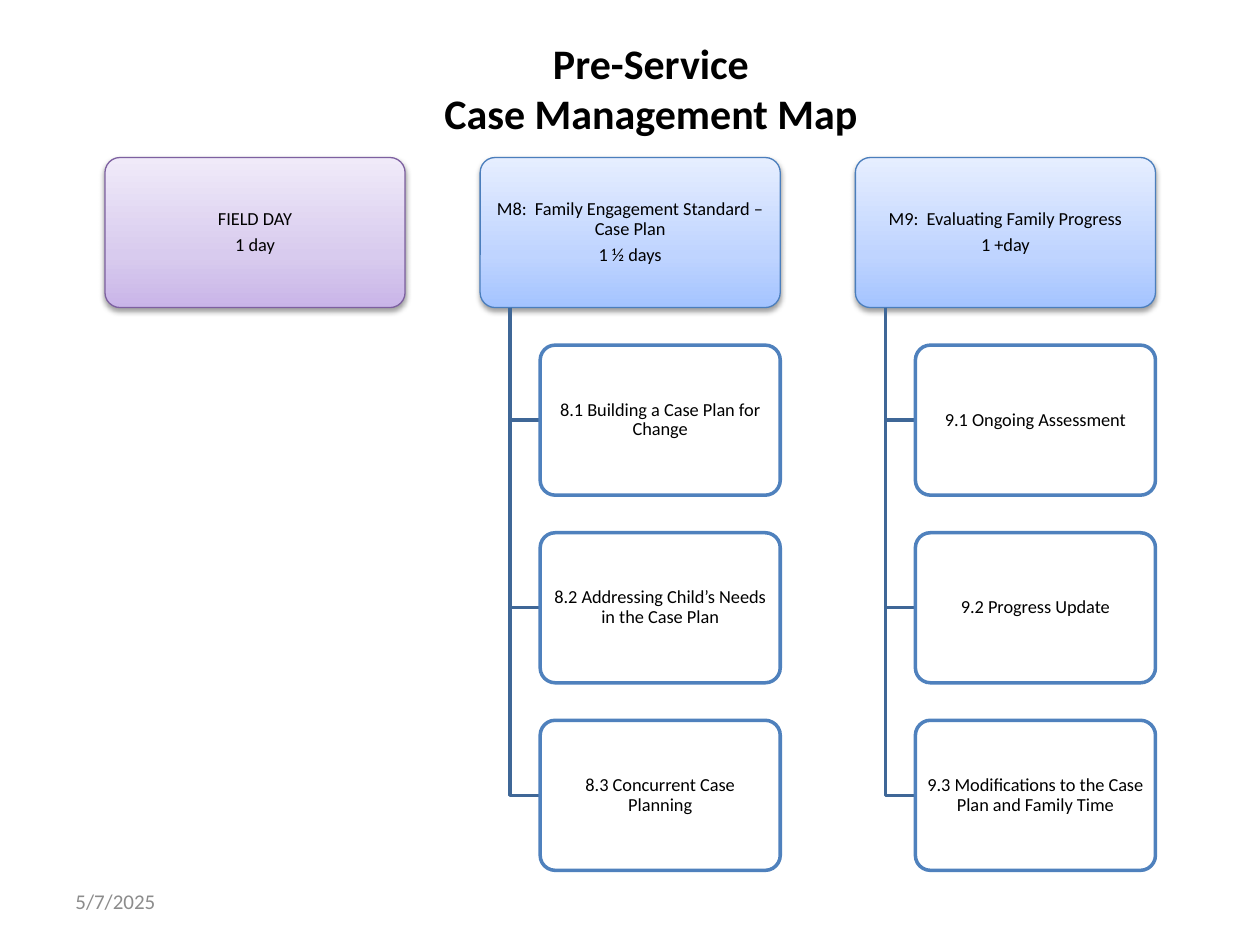
from copy import deepcopy

from lxml.etree import SubElement
from pptx import Presentation
from pptx.dml.color import RGBColor
from pptx.enum.shapes import MSO_SHAPE as Shape
from pptx.enum.text import MSO_ANCHOR as Anchor, MSO_AUTO_SIZE as AutoSize, PP_ALIGN as Align
from pptx.oxml.ns import qn
from pptx.util import Pt

FONT = "Calibri"
TOP, ROW_STEP = 90, 107.2
LEFT, COLUMN_STEP = 60, 214.4
HEADER_WIDTH, BOX_HEIGHT = 171.5, 85.75
TRUNK_INDENT, TOPIC_INDENT = 17.15, 34.3

PURPLE = ("7D60A0", ["C9B5E8", "D8CBEE", "F0EAF9"])
BLUE = ("4B7EBC", ["A4C4FF", "BFD4FF", "E6EEFF"])

MODULES = [
    (PURPLE, ["FIELD DAY", "1 day"], []),
    (BLUE, ["M8:  Family Engagement Standard – Case Plan", "1 ½ days"], [
        "8.1 Building a Case Plan for Change",
        "8.2 Addressing Child’s Needs in the Case Plan",
        "8.3 Concurrent Case Planning",
    ]),
    (BLUE, ["M9:  Evaluating Family Progress", "1 +day"], [
        "9.1 Ongoing Assessment",
        "9.2 Progress Update",
        "9.3 Modifications to the Case Plan and Family Time",
    ]),
]


def color(hex_string):
    return RGBColor.from_string(hex_string)


def place(shape, left, top, width, height):
    shape.left, shape.top, shape.width, shape.height = map(Pt, (left, top, width, height))


def add_run(paragraph, text, size, hex_color="000000", bold=False):
    run = paragraph.add_run()
    run.text = text
    run.font.name = FONT
    run.font.size = Pt(size)
    run.font.bold = bold
    run.font.color.rgb = color(hex_color)


def set_line(shape, hex_color, width):
    shape.line.color.rgb = color(hex_color)
    shape.line.width = Pt(width)


def fill_gradient(shape, hex_colors):
    """Fill from bottom to top with three stops."""
    shape.fill.gradient()
    shape.fill.gradient_angle = 90
    stop_list = shape._element.spPr.find(qn("a:gradFill")).find(qn("a:gsLst"))
    stop_list.insert(1, deepcopy(stop_list[0]))
    for stop, position, hex_color in zip(shape.fill.gradient_stops, (0, 0.35, 1), hex_colors):
        stop.position = position
        stop.color.rgb = color(hex_color)


def add_drop_shadow(shape):
    effects = shape._element.spPr.find(qn("a:effectLst"))
    shadow = SubElement(effects, qn("a:outerShdw"), blurRad=str(Pt(3.1)),
                        dist=str(Pt(1.6)), dir="5400000", rotWithShape="0")
    black = SubElement(shadow, qn("a:srgbClr"), val="000000")
    SubElement(black, qn("a:alpha"), val="38000")


def add_box(slide, left, top, width, lines):
    box = slide.shapes.add_shape(Shape.ROUNDED_RECTANGLE, Pt(left), Pt(top),
                                 Pt(width), Pt(BOX_HEIGHT))
    box.adjustments[0] = 0.1
    box.shadow.inherit = False
    frame = box.text_frame
    frame.word_wrap = True
    frame.vertical_anchor = Anchor.MIDDLE
    frame.margin_left = frame.margin_right = Pt(4)
    frame.margin_top = frame.margin_bottom = Pt(4)
    for index, line in enumerate(lines):
        paragraph = frame.add_paragraph() if index else frame.paragraphs[0]
        paragraph.alignment = Align.CENTER
        paragraph.line_spacing = 0.9
        paragraph.space_after = Pt(3.7)
        add_run(paragraph, line, 10.5)
    return box


def add_header(slide, left, lines, line_color, gradient):
    header = add_box(slide, left, TOP, HEADER_WIDTH, lines)
    fill_gradient(header, gradient)
    set_line(header, line_color, 0.75)
    add_drop_shadow(header)


def add_topic(slide, left, top, text):
    topic = add_box(slide, left, top, HEADER_WIDTH - TOPIC_INDENT, [text])
    topic.fill.solid()
    topic.fill.fore_color.rgb = color("FFFFFF")
    set_line(topic, "4F81BD", 2)


def add_elbow(slide, left, top, right, bottom):
    builder = slide.shapes.build_freeform(Pt(left), Pt(top))
    builder.add_line_segments([(Pt(left), Pt(bottom)), (Pt(right), Pt(bottom))], close=False)
    elbow = builder.convert_to_shape()
    elbow.fill.background()
    elbow.shadow.inherit = False
    set_line(elbow, "3F6797", 2)


def add_module(slide, left, palette, lines, topics):
    add_header(slide, left, lines, *palette)
    for row, topic in enumerate(topics, start=1):
        top = TOP + row * ROW_STEP
        topic_left = left + TOPIC_INDENT
        add_elbow(slide, left + TRUNK_INDENT, TOP + BOX_HEIGHT,
                  topic_left, top + BOX_HEIGHT / 2)
        add_topic(slide, topic_left, top, topic)


def set_title(slide, first_line, second_line):
    title = slide.shapes.title
    place(title, 48, 34, 648, 32.4)
    frame = title.text_frame
    frame.auto_size = AutoSize.NONE
    frame.vertical_anchor = Anchor.MIDDLE
    paragraph = frame.paragraphs[0]
    paragraph.alignment = Align.CENTER
    add_run(paragraph, first_line, 24, bold=True)
    paragraph.add_line_break()
    add_run(paragraph, second_line, 24, bold=True)


def add_date(slide, text):
    date = slide.shapes.add_textbox(Pt(36), Pt(500.5), Pt(168), Pt(28.75))
    date.text_frame.word_wrap = True
    date.text_frame.vertical_anchor = Anchor.MIDDLE
    add_run(date.text_frame.paragraphs[0], text, 12, "8C8C8C")


def main():
    presentation = Presentation()
    presentation.slide_width, presentation.slide_height = Pt(720), Pt(540)
    slide = presentation.slides.add_slide(presentation.slide_layouts.get_by_name("Title Only"))
    set_title(slide, "Pre-Service", "Case Management Map")
    for column, module in enumerate(MODULES):
        add_module(slide, LEFT + column * COLUMN_STEP, *module)
    add_date(slide, "5/7/2025")
    presentation.save("out.pptx")


if __name__ == "__main__":
    main()
